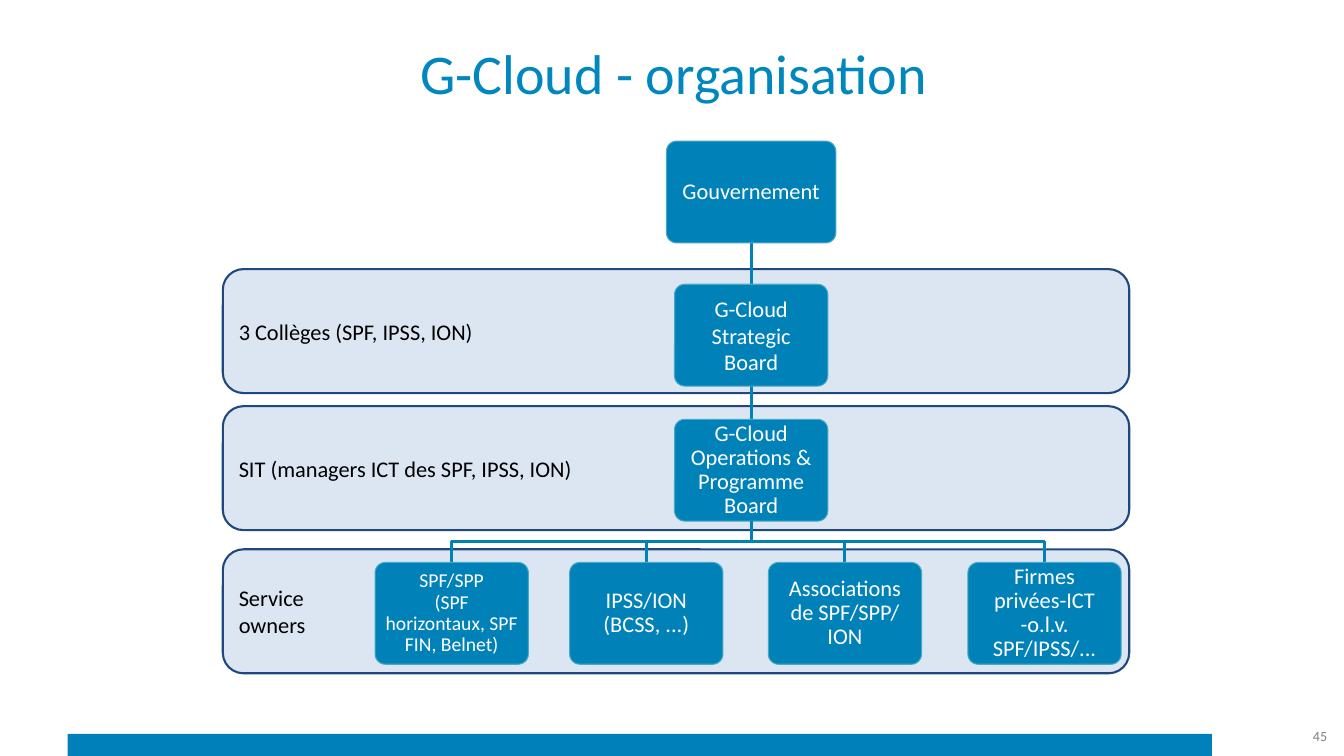
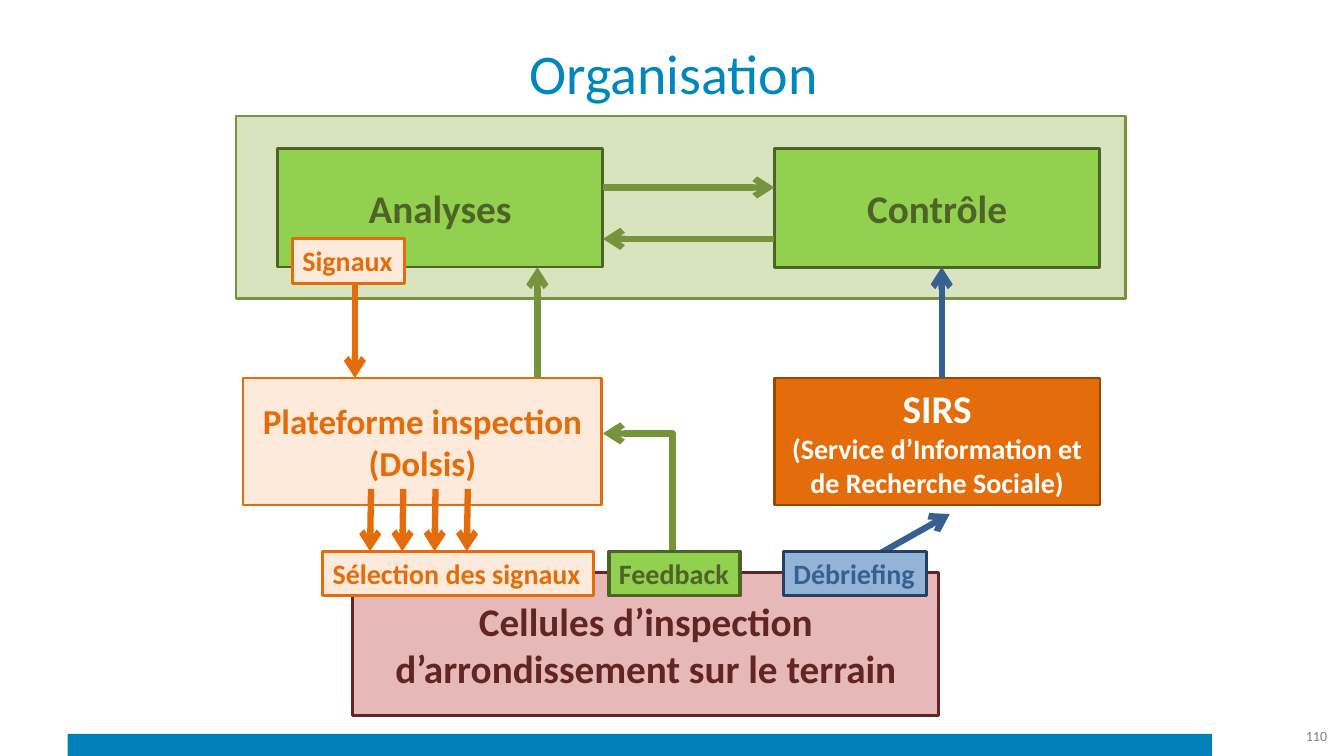
from lxml import etree
from pptx import Presentation
from pptx.dml.color import RGBColor
from pptx.enum.shapes import MSO_CONNECTOR, MSO_SHAPE
from pptx.enum.text import MSO_ANCHOR, MSO_AUTO_SIZE, PP_ALIGN
from pptx.oxml.ns import qn
from pptx.util import Inches, Pt

# Shared look
FONT = "Calibri"
WHITE, BLACK, GREY = "FFFFFF", "000000", "808080"
BLUE, TITLE_BLUE, FOOTER_BLUE = "0082B8", "0087BE", "0080BB"
BAND_FILL, BAND_LINE, BOX_LINE = "DCE6F2", "1F497D", "46AAC5"
PALE_GREEN, GREEN, OLIVE, DARK_GREEN = "D7E4BD", "92D050", "77933C", "4F6228"
PALE_ORANGE, ORANGE, BROWN = "FDEADA", "E46C0A", "984807"
PINK, MAROON = "E6B9B8", "632523"
PALE_BLUE, STEEL_BLUE, NAVY = "95B3D7", "376092", "254061"


def color(value):
    return RGBColor.from_string(value)


def add_text(shape, paragraphs, size, text_color, bold=False,
             align=PP_ALIGN.CENTER, spacing=None, inset=None):
    """Fill a shape with paragraphs, each a string or a (string, size) pair."""
    frame = shape.text_frame
    frame.word_wrap = True
    frame.vertical_anchor = MSO_ANCHOR.MIDDLE
    if inset is not None:
        frame.margin_left = frame.margin_right = Inches(inset)
        frame.margin_top = frame.margin_bottom = Inches(inset)
    for index, item in enumerate(paragraphs):
        text, text_size = item if isinstance(item, tuple) else (item, size)
        paragraph = frame.add_paragraph() if index else frame.paragraphs[0]
        paragraph.alignment = align
        if spacing:
            paragraph.line_spacing = spacing
        for number, part in enumerate(text.split("\n")):
            if number:
                paragraph.add_line_break()
            run = paragraph.add_run()
            run.text = part
            run.font.name = FONT
            run.font.size = Pt(text_size)
            run.font.bold = bold
            run.font.color.rgb = color(text_color)


def add_box(slide, box, fill, line=None, width=2, kind=MSO_SHAPE.RECTANGLE):
    shape = slide.shapes.add_shape(kind, *map(Inches, box))
    shape.shadow.inherit = False
    shape.fill.solid()
    shape.fill.fore_color.rgb = color(fill)
    if line:
        shape.line.color.rgb = color(line)
        shape.line.width = Pt(width)
    else:
        shape.line.fill.background()
    return shape


def add_path(slide, points, line_color, width, arrow=False):
    """Draw a straight connector, or an open outline if there are bends."""
    points = [(Inches(x), Inches(y)) for x, y in points]
    if len(points) == 2:
        shape = slide.shapes.add_connector(
            MSO_CONNECTOR.STRAIGHT, *points[0], *points[1])
        etree.SubElement(shape._element.spPr, qn("a:effectLst"))
    else:
        builder = slide.shapes.build_freeform(*points[0], scale=1.0)
        builder.add_line_segments(points[1:], close=False)
        shape = builder.convert_to_shape()
        shape.shadow.inherit = False
        shape.fill.background()
    shape.line.color.rgb = color(line_color)
    shape.line.width = Pt(width)
    if arrow:
        line = shape.line._get_or_add_ln()
        etree.SubElement(line, qn("a:tailEnd"), type="arrow")


def add_base_slide(presentation, title, number):
    slide = presentation.slides.add_slide(presentation.slide_layouts[6])
    add_box(slide, (0.67, 7.28, 11.35, 0.25), FOOTER_BLUE)
    title_box = slide.shapes.add_textbox(
        *map(Inches, (0.68, 0.21, 12, 1.01)))
    add_text(title_box, [title], 40, TITLE_BLUE)
    number_box = slide.shapes.add_textbox(
        *map(Inches, (12.17, 7.1, 1.09, 0.4)))
    add_text(number_box, [number], 10, GREY, align=PP_ALIGN.RIGHT)
    return slide


def draw_cloud_chart(slide, left, top):
    axis, box_width, box_height = 5.24, 1.52, 1.01

    def add_unit(center, y, text, width=box_width, size=16, spacing=0.9):
        box = (left + center - width / 2, top + y, width, box_height)
        unit = add_box(slide, box, BLUE, BOX_LINE, 0.75,
                       MSO_SHAPE.ROUNDED_RECTANGLE)
        unit.adjustments[0] = 0.1
        add_text(unit, [text], size, WHITE, spacing=spacing, inset=0.07)

    def add_link(*points):
        add_path(slide, [(left + x, top + y) for x, y in points], BLUE, 2)

    # Bands
    bands = [
        (1.27, ["3 Collèges (SPF, IPSS, ION)"]),
        (2.63, ["SIT (managers ICT des SPF, IPSS, ION)"]),
        (4.05, ["Service", "owners"]),
    ]
    for y, paragraphs in bands:
        band = add_box(slide, (left, top + y, 8.99, 1.23), BAND_FILL,
                       BAND_LINE, 1.5, MSO_SHAPE.ROUNDED_RECTANGLE)
        add_text(band, paragraphs, 16, BLACK, align=PP_ALIGN.LEFT)

    # Chain of boards
    board_tops = (0, 1.42, 2.76)
    for upper, lower in zip(board_tops, board_tops[1:]):
        add_link((axis, upper + box_height), (axis, lower))
    add_unit(axis, board_tops[0], "Gouvernement", width=1.68)
    add_unit(axis, board_tops[1], "G-Cloud Strategic Board", spacing=1.0)
    add_unit(axis, board_tops[2], "G-Cloud Operations & Programme Board")

    # Service owners
    owners = [
        (2.27, "SPF/SPP\n(SPF horizontaux, SPF FIN, Belnet)", 14),
        (4.2, "IPSS/ION (BCSS, ...)", 16),
        (6.17, "Associations de SPF/SPP/ ION", 16),
        (8.15, "Firmes privées-ICT -o.l.v. SPF/IPSS/...", 16),
    ]
    start, owner_top = board_tops[2] + box_height, 4.18
    bend = (start + owner_top) / 2
    for center, text, size in owners:
        add_link((axis, start), (axis, bend), (center, bend),
                 (center, owner_top))
        add_unit(center, owner_top, text, size=size)


def draw_inspection_flow(slide, left, top):
    # Frame and main blocks
    add_box(slide, (left, top, 8.82, 1.81), PALE_GREEN, OLIVE)
    blocks = [
        (0.41, 0.32, 3.23, 1.18, GREEN, DARK_GREEN, 2, DARK_GREEN, 28,
         ["Analyses"]),
        (0.07, 2.6, 3.56, 1.26, PALE_ORANGE, ORANGE, 2, ORANGE, 25,
         ["Plateforme inspection", "(Dolsis)"]),
        (5.34, 2.6, 3.23, 1.26, ORANGE, BROWN, 2, WHITE, 28,
         ["SIRS", ("(Service d’Information et de Recherche Sociale)", 20)]),
        (5.34, 0.32, 3.23, 1.18, GREEN, DARK_GREEN, 2.25, DARK_GREEN, 28,
         ["Contrôle"]),
        (1.16, 4.53, 5.81, 1.42, PINK, MAROON, 2, MAROON, 28,
         ["Cellules d’inspection d’arrondissement sur le terrain"]),
    ]
    for x, y, width, height, fill, line, weight, ink, size, text in blocks:
        block = add_box(slide, (left + x, top + y, width, height),
                        fill, line, weight)
        add_text(block, text, size, ink, bold=True)

    # Arrows
    arrows = [
        (ORANGE, [(1.18, 1.65), (1.18, 2.6)]),
        (OLIVE, [(2.99, 2.6), (2.99, 1.5)]),
        (OLIVE, [(4.33, 4.4), (4.33, 3.15), (3.64, 3.15)]),
        (STEEL_BLUE, [(6.14, 4.48), (7.08, 3.95)]),
        (STEEL_BLUE, [(7, 2.6), (7, 1.5)]),
        (OLIVE, [(3.64, 0.71), (5.34, 0.71)]),
        (OLIVE, [(5.34, 1.22), (3.64, 1.22)]),
    ]
    for index in range(4):
        x = 1.34 + 0.32 * index
        arrows.append((ORANGE, [(x, 3.7), (x - 0.01, 4.32)]))
    for line_color, points in arrows:
        add_path(slide, [(left + x, top + y) for x, y in points],
                 line_color, 4.5, arrow=True)

    # Labels
    labels = [
        (0.56, 1.22, 1.11, PALE_ORANGE, ORANGE, ORANGE, "Signaux"),
        (3.7, 4.32, 1.3, GREEN, DARK_GREEN, DARK_GREEN, "Feedback"),
        (5.43, 4.32, 1.42, PALE_BLUE, NAVY, STEEL_BLUE, "Débriefing"),
        (0.86, 4.32, 2.69, PALE_ORANGE, ORANGE, ORANGE,
         "Sélection des signaux"),
    ]
    for x, y, width, fill, line, ink, text in labels:
        label = add_box(slide, (left + x, top + y, width, 0.44),
                        fill, line, 2.25)
        add_text(label, [text], 20, ink, bold=True, align=PP_ALIGN.LEFT)
        label.text_frame.word_wrap = False
        label.text_frame.vertical_anchor = MSO_ANCHOR.TOP
        label.text_frame.auto_size = MSO_AUTO_SIZE.SHAPE_TO_FIT_TEXT


def main():
    presentation = Presentation()
    presentation.slide_width = Inches(13.33)
    presentation.slide_height = Inches(7.5)
    slide = add_base_slide(presentation, "G-Cloud - organisation", "45")
    draw_cloud_chart(slide, 2.21, 1.4)
    slide = add_base_slide(presentation, "Organisation", "110")
    draw_inspection_flow(slide, 2.34, 1.15)
    presentation.save("out.pptx")


if __name__ == "__main__":
    main()
